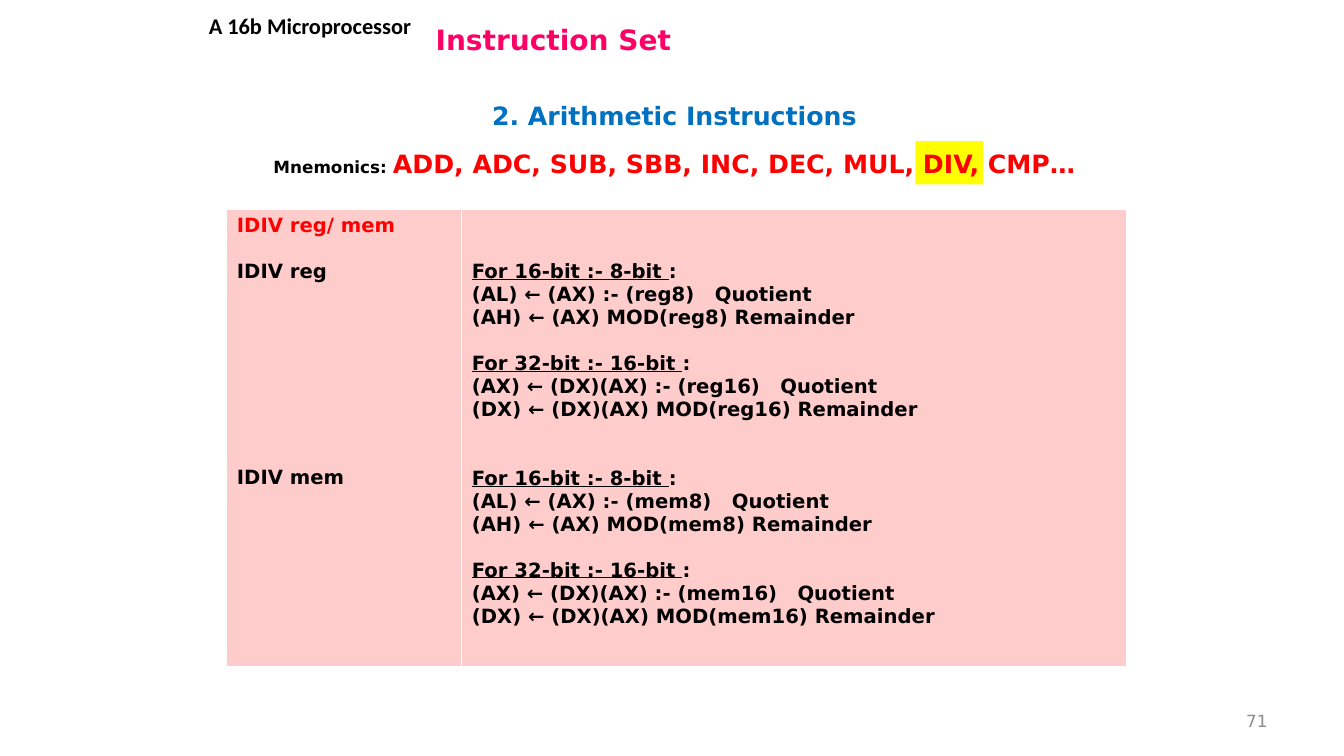
from lxml import etree
from pptx import Presentation
from pptx.dml.color import RGBColor
from pptx.enum import shapes, text
from pptx.oxml import ns
from pptx.util import Inches, Pt

LINE = 16.3
SANS = "DejaVu Sans"


def rgb(value):
    """Turn a hex string into a colour."""
    return RGBColor.from_string(value)


def style(font, size, color, name=SANS, bold=True):
    """Format the font of a paragraph or run."""
    font.size, font.name, font.bold = Pt(size), name, bold
    font.color.rgb = rgb(color)


def add_text(s, box, content, size, color, align, anchor=text.MSO_ANCHOR.MIDDLE, **kw):
    """Place a one-paragraph text box and return its paragraph."""
    tf = s.shapes.add_textbox(*map(Inches, box)).text_frame
    tf.word_wrap, tf.vertical_anchor = True, anchor
    p = tf.paragraphs[0]
    p.text, p.alignment = content, align
    style(p.font, size, color, **kw)
    return p


def add_title(s, box):
    """Place the slide title in its placeholder."""
    sp = s.shapes.title
    sp.left, sp.top, sp.width, sp.height = map(Inches, box)
    tf = sp.text_frame
    tf.auto_size = text.MSO_AUTO_SIZE.NONE
    tf.vertical_anchor = text.MSO_ANCHOR.MIDDLE
    p = tf.paragraphs[0]
    p.text, p.alignment = "Instruction Set", text.PP_ALIGN.LEFT
    style(p.font, 20, "FF0066")


def add_mnemonics(s, box):
    """Place the mnemonics line over its highlighted entry."""
    left, top, width, height = box
    sp = s.shapes.add_shape(shapes.MSO_SHAPE.RECTANGLE, Inches(left + 7.12),
                            Inches(top - 0.02), Inches(0.67), Inches(0.43))
    sp.shadow.inherit = False
    sp.fill.solid()
    sp.fill.fore_color.rgb = rgb("FFFF00")
    sp.line.fill.background()
    p = add_text(s, box, "Mnemonics: ", 12, "000000", text.PP_ALIGN.CENTER,
                 text.MSO_ANCHOR.TOP)
    r = p.add_run()
    r.text = "ADD, ADC, SUB, SBB, INC, DEC, MUL, DIV, CMP…"
    style(r.font, 18, "FF0000")


def add_line(tf, content, gap=0, color="000000"):
    """Append a table line with a gap counted in blank lines."""
    p = tf.paragraphs[0] if not tf.text else tf.add_paragraph()
    p.text = content
    p.space_before = Pt(gap * LINE)
    style(p.font, 14, color)
    return p


def set_tab(p, position):
    """Add a left tab stop to a paragraph."""
    pPr = p._p.get_or_add_pPr()
    tabs = etree.Element(ns.qn("a:tabLst"))
    etree.SubElement(tabs, ns.qn("a:tab"), pos=str(Inches(position)), algn="l")
    pPr.find(ns.qn("a:defRPr")).addprevious(tabs)


def add_division(tf, bits, source, operand, high, low, gap, tab):
    """Append the heading, quotient and remainder of one division."""
    p = add_line(tf, f"For {2 * bits}-bit :- {bits}-bit ", gap)
    p.runs[0].font.underline = True
    p.add_run().text = ":"
    set_tab(add_line(tf, f"({low}) ← {source} :- ({operand}{bits})\tQuotient"), tab)
    add_line(tf, f"({high}) ← {source} MOD({operand}{bits}) Remainder")


def add_instructions(s, box):
    """Place the IDIV table."""
    table = s.shapes.add_table(1, 2, *map(Inches, box)).table
    table.first_row = table.horz_banding = False
    for column, width in zip(table.columns, (2.33, box[2] - 2.33)):
        column.width = Inches(width)
    forms, results = table.cell(0, 0), table.cell(0, 1)
    for cell in (forms, results):
        cell.fill.solid()
        cell.fill.fore_color.rgb = rgb("FFCCCC")
    results.margin_top = Inches(0.05) + Pt(2 * LINE)
    add_line(forms.text_frame, "IDIV reg/ mem", color="FF0000")
    for operand, form_gap, gap, tab in (("reg", 1, 0, 2.41), ("mem", 8, 2, 2.58)):
        add_line(forms.text_frame, f"IDIV {operand}", form_gap)
        add_division(results.text_frame, 8, "(AX)", operand, "AH", "AL", gap, tab)
        add_division(results.text_frame, 16, "(DX)(AX)", operand, "DX", "AX", 1, tab + 0.65)


def main():
    """Build and save the slide."""
    prs = Presentation()
    prs.slide_width, prs.slide_height = Inches(13.33), Inches(7.5)
    s = prs.slides.add_slide(prs.slide_layouts[5])
    center = text.PP_ALIGN.CENTER
    add_title(s, (4.22, 0.12, 8.78, 0.53))
    add_text(s, (1.74, 0.07, 2.67, 0.37), "A 16b Microprocessor", 16, "000000", center,
             text.MSO_ANCHOR.TOP, name="Calibri")
    add_text(s, (1.96, 0.93, 9.46, 0.43), "2. Arithmetic Instructions", 18, "0070C0", center)
    add_mnemonics(s, (1.96, 1.42, 9.46, 0.4))
    add_instructions(s, (2.25, 2.08, 8.92, 4.53))
    add_text(s, (9.56, 6.95, 3.11, 0.4), "71", 12, "8C8C8C", text.PP_ALIGN.RIGHT, bold=False)
    prs.save("out.pptx")


if __name__ == "__main__":
    main()
